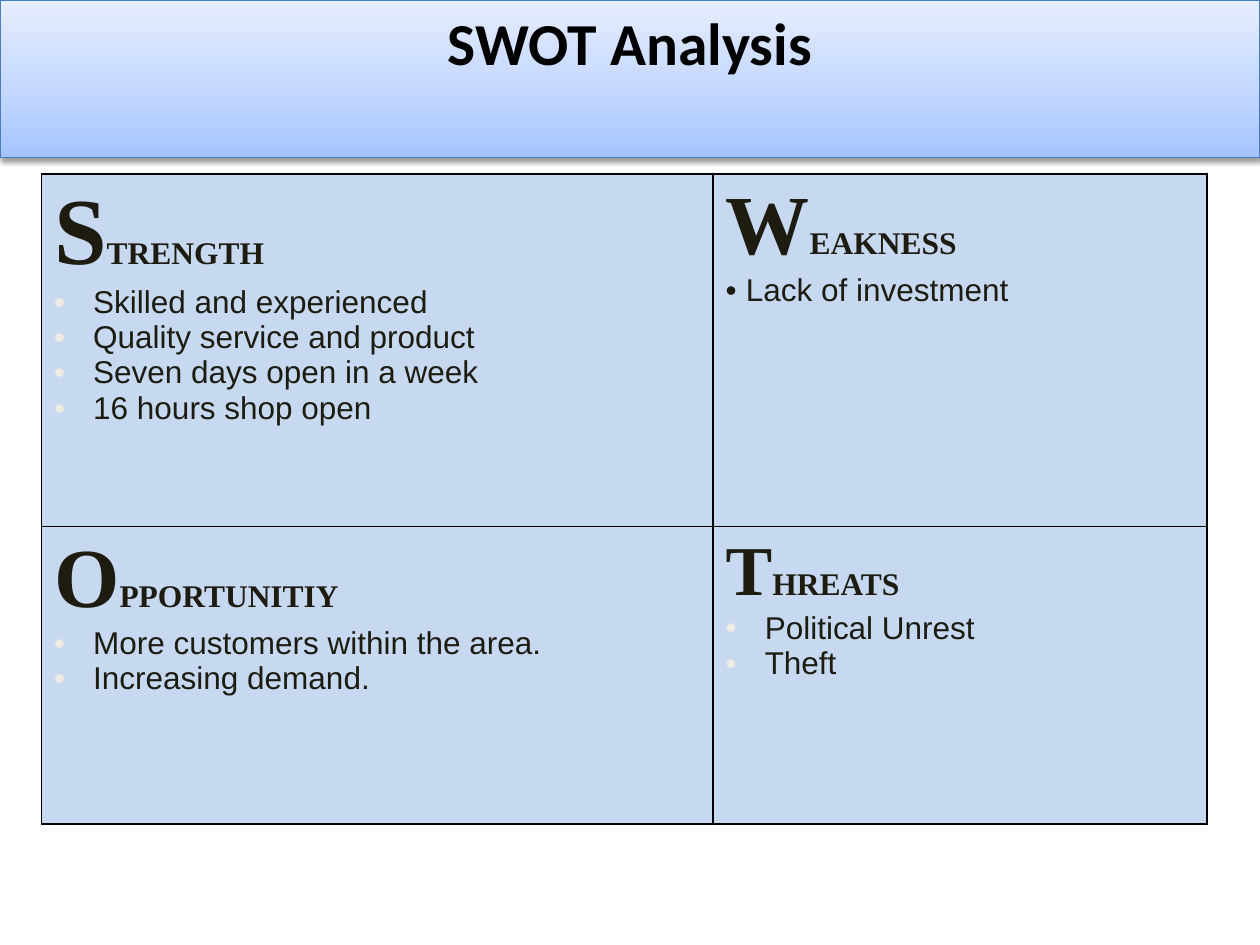
from lxml.etree import SubElement
from pptx import Presentation
from pptx.dml.color import RGBColor
from pptx.enum.text import MSO_ANCHOR, MSO_AUTO_SIZE, PP_ALIGN
from pptx.oxml.ns import qn
from pptx.util import Inches, Pt

COLORS = {
    "title": "000000",
    "text": "1E1C11",
    "pale bullet": "EEECE1",
    "cell": "C6D9F1",
    "border": "000000",
    "banner line": "4B7EBC",
    "shadow": "000000",
}
BANNER_STOPS = [(0, "A4C4FF"), (35, "BFD4FF"), (100, "E6EEFF")]
COLUMN_WIDTHS = [5.33, 3.92]
ROW_HEIGHTS = [2.8, 2.36]
QUADRANTS = [
    [
        ("S", "TRENGTH", 54, "pale bullet", 0.31, [
            "Skilled and experienced",
            "Quality service and product",
            "Seven days open in a week",
            "16 hours shop open",
        ]),
        ("W", "EAKNESS", 48, "text", 0.16, ["Lack of investment"]),
    ],
    [
        ("O", "PPORTUNITIY", 48, "pale bullet", 0.31, [
            "More customers within the area.",
            "Increasing demand.",
        ]),
        ("T", "HREATS", 40, "pale bullet", 0.31, ["Political Unrest", "Theft"]),
    ],
]


def add_element(parent, tag, **attributes):
    """Append a drawing element with the given attributes."""
    values = {name: str(value) for name, value in attributes.items()}
    return SubElement(parent, qn(tag), values)


def add_color(parent, color):
    """Append a hex colour element."""
    return add_element(parent, "a:srgbClr", val=color)


def style_font(font, name, color, bold, size=None):
    """Set the typeface, colour, weight and optional size of a font."""
    font.name = name
    font.bold = bold
    font.color.rgb = RGBColor.from_string(COLORS[color])
    if size:
        font.size = Pt(size)


def add_banner(page):
    """Turn the title placeholder into a gradient banner with a shadow."""
    banner = page.shapes.title
    banner.left, banner.top = Inches(0), Inches(0)
    banner.width, banner.height = Inches(10), Inches(1.25)

    properties = banner.element.spPr
    gradient = add_element(properties, "a:gradFill", rotWithShape=1)
    stops = add_element(gradient, "a:gsLst")
    for position, color in BANNER_STOPS:
        add_color(add_element(stops, "a:gs", pos=position * 1000), color)
    add_element(gradient, "a:lin", ang=270 * 60000, scaled=0)
    banner.line.color.rgb = RGBColor.from_string(COLORS["banner line"])
    banner.line.width = Pt(0.75)
    effects = add_element(properties, "a:effectLst")
    shadow = add_element(effects, "a:outerShdw", blurRad=Pt(3.1), dist=Pt(1.6),
                         dir=90 * 60000, rotWithShape=0)
    add_element(add_color(shadow, COLORS["shadow"]), "a:alpha", val=38000)

    frame = banner.text_frame
    frame.text = "SWOT Analysis"
    frame.word_wrap = True
    frame.auto_size = MSO_AUTO_SIZE.NONE
    frame.vertical_anchor = MSO_ANCHOR.TOP
    para = frame.paragraphs[0]
    para.alignment = PP_ALIGN.CENTER
    style_font(para.font, "Calibri", "title", True, 34)


def add_heading(para, initial, rest, initial_size):
    """Write a heading with a large initial letter."""
    style_font(para.font, "Times New Roman", "text", True)
    for text, size in ((initial, initial_size), (rest, 18)):
        span = para.add_run()
        span.text = text
        span.font.size = Pt(size)


def add_bullet(para, text, bullet_color, indent):
    """Write a bulleted line with a hanging indent."""
    properties = para._p.get_or_add_pPr()
    properties.set("marL", str(Inches(indent)))
    properties.set("indent", str(-Inches(indent)))
    add_color(add_element(properties, "a:buClr"), COLORS[bullet_color])
    add_element(properties, "a:buFont", typeface="Arial")
    add_element(properties, "a:buChar", char="•")
    style_font(para.font, "Arial", "text", False, 18)
    para.add_run().text = text


def style_cell(cell):
    """Give a cell its borders and fill."""
    properties = cell._tc.get_or_add_tcPr()
    for side in ("a:lnL", "a:lnR", "a:lnT", "a:lnB"):
        line = add_element(properties, side, w=Pt(1))
        add_color(add_element(line, "a:solidFill"), COLORS["border"])
    cell.fill.solid()
    cell.fill.fore_color.rgb = RGBColor.from_string(COLORS["cell"])


def fill_quadrant(cell, initial, rest, initial_size, bullet_color, indent, points):
    """Write one quadrant of the analysis."""
    style_cell(cell)
    frame = cell.text_frame
    add_heading(frame.paragraphs[0], initial, rest, initial_size)
    for point in points:
        add_bullet(frame.add_paragraph(), point, bullet_color, indent)


def add_swot_table(page):
    """Add the two-by-two table of quadrants."""
    table = page.shapes.add_table(
        len(ROW_HEIGHTS), len(COLUMN_WIDTHS), Inches(0.33), Inches(1.38),
        Inches(sum(COLUMN_WIDTHS)), Inches(sum(ROW_HEIGHTS))).table
    table.first_row = False
    table.horz_banding = False
    for column, width in zip(table.columns, COLUMN_WIDTHS):
        column.width = Inches(width)
    for row, height, quadrants in zip(table.rows, ROW_HEIGHTS, QUADRANTS):
        row.height = Inches(height)
        for cell, quadrant in zip(row.cells, quadrants):
            fill_quadrant(cell, *quadrant)


def main():
    """Build and save the slide."""
    deck = Presentation()
    deck.slide_width, deck.slide_height = Inches(10), Inches(7.5)
    page = deck.slides.add_slide(deck.slide_layouts[5])
    add_banner(page)
    add_swot_table(page)
    deck.save("out.pptx")


if __name__ == "__main__":
    main()
